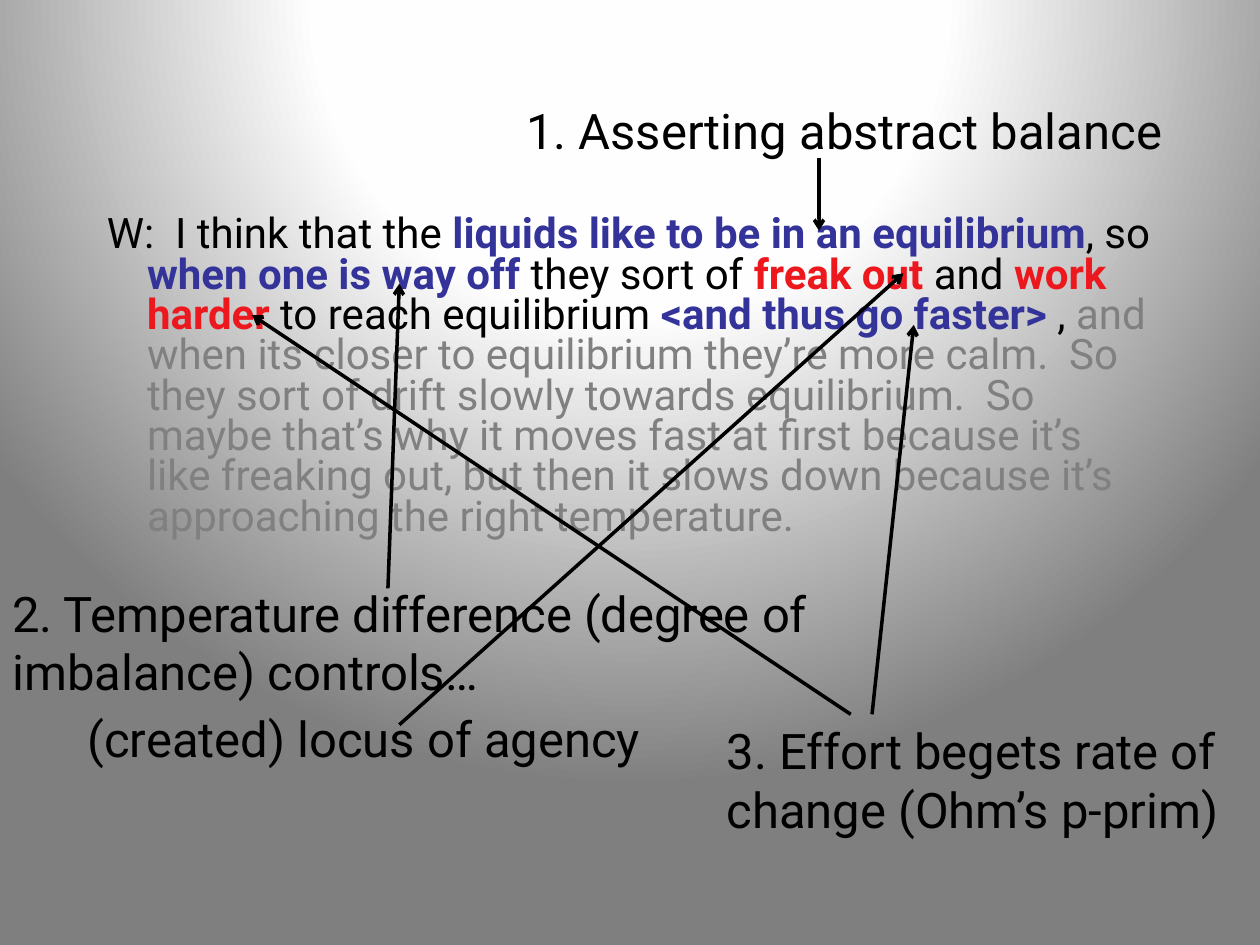
from pptx import Presentation
from pptx.dml.color import RGBColor
from pptx.enum.shapes import MSO_CONNECTOR as Connector
from pptx.enum.text import MSO_ANCHOR as Anchor, MSO_AUTO_SIZE as AutoSize, PP_ALIGN as Align
from pptx.oxml import parse_xml
from pptx.oxml.ns import nsdecls
from pptx.util import Cm, Pt

COLORS = {
    "text": "000000",
    "balance": "333399",
    "agency": "ED181E",
    "muted": "808080",
}
BACKDROP_STOPS = [(0, "FFFFFF"), (40, "FEFEFE"), (100, "7F7F7F")]

# Each part of the quotation with the colour role it plays; None is plain text.
QUOTATION = [
    ("W:  I think that the ", None),
    ("liquids like to be in an equilibrium", "balance"),
    (", so ", None),
    ("when one is way off ", "balance"),
    ("they sort of ", None),
    ("freak out", "agency"),
    (" and ", None),
    ("work harder", "agency"),
    (" to reach equilibrium ", None),
    ("<and thus go faster>", "balance"),
    (" , ", None),
    ("and when its closer to equilibrium they’re more calm.  So they sort of "
     "drift slowly towards equilibrium.  So maybe that’s why it moves fast at "
     "first because it’s like freaking out, but then it slows down because "
     "it’s approaching the right temperature.", "muted"),
]

# Text, box (left, top, width, height in cm), extra formats
CODES = [
    ("1. Asserting abstract balance", (10.36, 1.9, 13.77, 1.45), {}),
    ("2. Temperature difference (degree of imbalance) controls…",
     (0, 11.63, 16.94, 2.64), {}),
    ("3. Effort begets rate of change (Ohm’s p-prim)",
     (14.4, 14.4, 12.07, 2.74), {}),
    ("(created) locus of agency", (1.47, 14.15, 11.73, 1.45),
     {"wrap": False, "align": Align.CENTER}),
]

# From a code to the words it explains, in cm
LINKS = [
    ((16.51, 3.18), (16.51, 4.65)),
    ((8.05, 14.61), (18.21, 5.51)),
    ((17.15, 14.4), (5.08, 6.35)),
    ((17.58, 14.4), (18.42, 6.55)),
    ((7.82, 11.86), (8.05, 5.72)),
]


def apply(target, formats):
    for name, value in formats.items():
        setattr(target, name, value)


class SlideBuilder:
    font = "Roboto"
    quote_size = Pt(24)
    code_size = Pt(28)
    line_width = Pt(2)

    def __init__(self, deck):
        self.slide = deck.slides.add_slide(deck.slide_layouts[1])
        title = self.slide.shapes.title._element
        title.getparent().remove(title)

    def backdrop(self, stops):
        """Radial gradient centred above the slide."""
        gradient = "".join(
            f'<a:gs pos="{position * 1000}"><a:srgbClr val="{color}"/></a:gs>'
            for position, color in stops)
        self.slide._element.cSld.insert(0, parse_xml(
            f'<p:bg {nsdecls("p", "a")}><p:bgPr><a:gradFill rotWithShape="1">'
            f'<a:gsLst>{gradient}</a:gsLst><a:path path="circle">'
            '<a:fillToRect l="50000" t="-80000" r="50000" b="180000"/>'
            '</a:path></a:gradFill><a:effectLst/></p:bgPr></p:bg>'))

    def add_run(self, paragraph, text, size, color="text", bold=False):
        run = paragraph.add_run()
        run.text = text
        apply(run.font, {"name": self.font, "size": size, "bold": bold})
        run.font.color.rgb = RGBColor.from_string(COLORS[color])

    def quotation(self, parts, box):
        body = self.slide.placeholders[1]
        apply(body, dict(zip(("left", "top", "width", "height"), map(Cm, box))))
        apply(body.text_frame, {"auto_size": AutoSize.NONE,
                                "vertical_anchor": Anchor.TOP})
        paragraph = body.text_frame.paragraphs[0]
        paragraph.line_spacing = 0.8
        properties = paragraph._p.get_or_add_pPr()
        properties.set("marL", str(Cm(0.81)))
        properties.set("indent", str(-Cm(0.81)))
        properties.append(parse_xml(f'<a:buNone {nsdecls("a")}/>'))
        for text, role in parts:
            self.add_run(paragraph, text, self.quote_size, role or "text",
                         bold=role in ("balance", "agency"))

    def code(self, text, box, wrap=True, align=Align.LEFT):
        frame = self.slide.shapes.add_textbox(*map(Cm, box)).text_frame
        apply(frame, {"word_wrap": wrap, "auto_size": AutoSize.SHAPE_TO_FIT_TEXT})
        paragraph = frame.paragraphs[0]
        paragraph.alignment = align
        self.add_run(paragraph, text, self.code_size)

    def arrow(self, start, end):
        link = self.slide.shapes.add_connector(
            Connector.STRAIGHT, *map(Cm, start + end))
        link.line.width = self.line_width
        link.line.color.rgb = RGBColor.from_string(COLORS["text"])
        link.line._get_or_add_ln().append(
            parse_xml(f'<a:tailEnd {nsdecls("a")} type="arrow"/>'))
        link._element.spPr.append(parse_xml(f'<a:effectLst {nsdecls("a")}/>'))


def main():
    deck = Presentation()
    apply(deck, {"slide_width": Cm(25.4), "slide_height": Cm(19.05)})
    builder = SlideBuilder(deck)
    builder.backdrop(BACKDROP_STOPS)
    builder.quotation(QUOTATION, (1.9, 4.24, 21.59, 13.54))
    for text, box, formats in CODES:
        builder.code(text, box, **formats)
    for start, end in LINKS:
        builder.arrow(start, end)
    deck.save("out.pptx")


if __name__ == "__main__":
    main()
